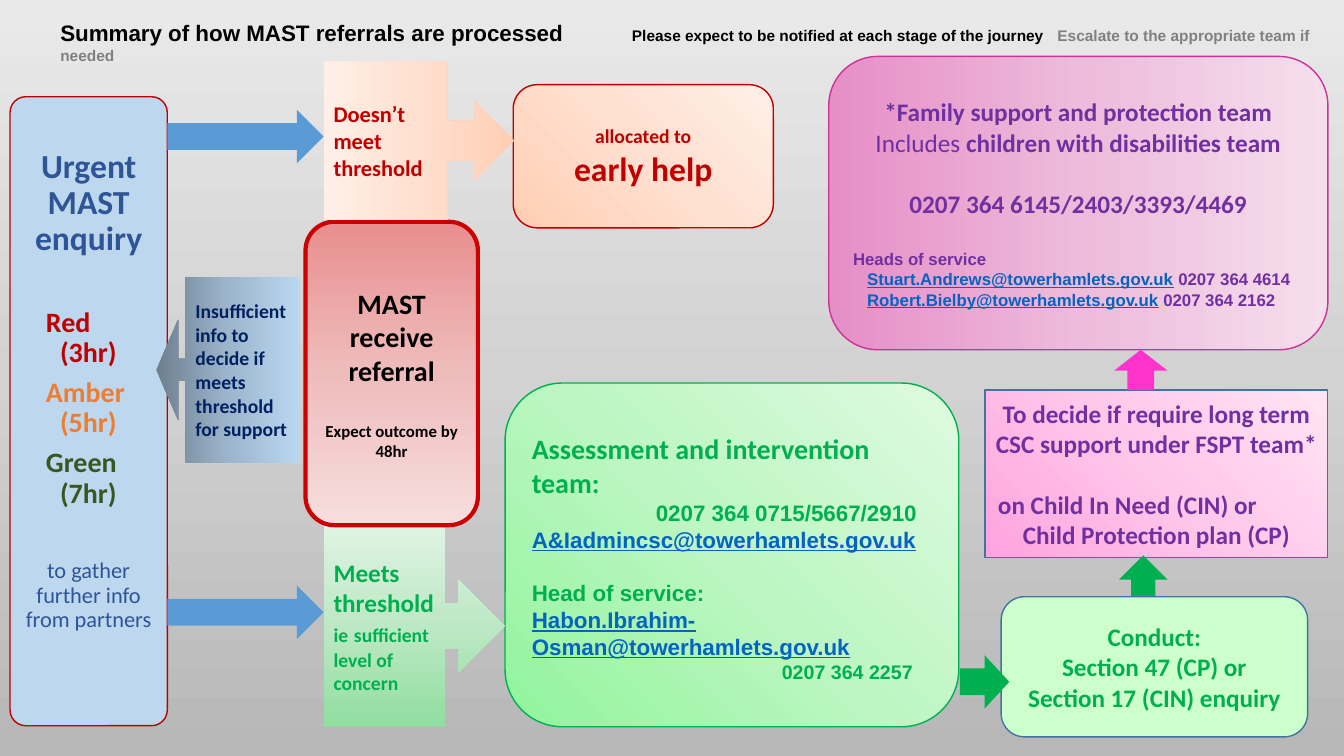
from copy import deepcopy

from lxml import etree
from pptx import Presentation
from pptx.dml.color import RGBColor
from pptx.enum.shapes import MSO_SHAPE
from pptx.enum.text import MSO_ANCHOR, PP_ALIGN
from pptx.oxml.ns import qn
from pptx.util import Inches, Pt

ROUND, RECT = MSO_SHAPE.ROUNDED_RECTANGLE, MSO_SHAPE.RECTANGLE
RIGHT, UP = MSO_SHAPE.RIGHT_ARROW, MSO_SHAPE.UP_ARROW
RIGHT_CALLOUT = MSO_SHAPE.RIGHT_ARROW_CALLOUT
LEFT_CALLOUT = MSO_SHAPE.LEFT_ARROW_CALLOUT
LEFT, CENTER = PP_ALIGN.LEFT, PP_ALIGN.CENTER

CELL = 0.1  # grid cell in inches; boxes are (column, row, columns, rows)

COLORS = {
    "black": "000000", "gray": "808080", "navy": "002060", "blue": "2F5597",
    "arrow": "5B9BD5", "sky": "BDD7EE", "edge": "43739E", "link": "0563C1",
    "red": "C00000", "bright_red": "CC0000", "amber": "ED7D31",
    "moss": "385723", "green": "00B050", "mint": "CCFFCC",
    "purple": "7030A0", "magenta": "CC3399", "pink": "FF33CC",
}
# Three colours and the direction, in degrees clockwise
GRADIENTS = {
    "page": (["B7B7B7", "D2D2D2", "E9E9E9"], 270),
    "peach": (["FFCEB3", "FFDFCF", "FFEFE7"], 315),
    "peach_left": (["FFCEB3", "FFDFCF", "FFEFE7"], 180),
    "rose": (["E98F8F", "EFBCBC", "F7DEDE"], 90),
    "steel": (["6E7F8F", "9DB5CC", "BAD7F2"], 0),
    "leaf": (["91DEA0", "BDE8C5", "DFF3E3"], 270),
    "lime": (["91F49C", "BDF6C3", "DFFAE1"], 315),
    "orchid": (["E68EC7", "EDBBDB", "F6DEED"], 0),
    "candy": (["FFA3DF", "FFC7EA", "FFE4F4"], 315),
}


def rgb(name):
    return RGBColor.from_string(COLORS[name])


def paint(owner, element, name):
    """Fill a shape or the background with a plain colour or a gradient."""
    if name in COLORS:
        owner.fill.solid()
        owner.fill.fore_color.rgb = rgb(name)
        return
    colors, angle = GRADIENTS[name]
    fill = owner.fill
    fill.gradient()
    grad = next(element.iter(qn("a:gradFill")))
    stops = grad.find(qn("a:gsLst"))
    stops.append(deepcopy(stops[0]))
    for i, (stop, color) in enumerate(zip(fill.gradient_stops, colors)):
        stop.color.rgb = RGBColor.from_string(color)
        stop.position = i / 2
    grad.find(qn("a:lin")).set("ang", str(angle * 60000))


def add_box(s, region, kind, cells, fill, line=None, width=1, adj=()):
    """Place a preset shape relative to the top left of its region."""
    x, y, w, h = cells
    sp = s.shapes.add_shape(kind, *(Inches(v * CELL) for v in
                                    (region[0] + x, region[1] + y, w, h)))
    sp.shadow.inherit = False
    for i, value in enumerate(adj):
        sp.adjustments[i] = value
    paint(sp, sp._element, fill)
    if line:
        sp.line.color.rgb = rgb(line)
        sp.line.width = Pt(width)
    else:
        sp.line.fill.background()
    tf = sp.text_frame
    tf.word_wrap = True
    tf.vertical_anchor = MSO_ANCHOR.MIDDLE
    return tf


def add_text(tf, text, size=18, color="black", font="Calibri", bold=True,
             align=LEFT, before=0, after=0, spacing=None, indent=0):
    """Add a paragraph; text is a string or a list of (string, overrides)."""
    p = tf.paragraphs[0]
    if p.runs:
        p = tf.add_paragraph()
    p.alignment = align
    p.space_before, p.space_after = Pt(before), Pt(after)
    if spacing:
        p.line_spacing = spacing
    if indent:
        p._p.get_or_add_pPr().set("marL", str(Inches(indent)))
    for words, own in [(text, {})] if isinstance(text, str) else text:
        r = p.add_run()
        r.text = words
        r.font.name = font
        r.font.size = Pt(own.get("size", size))
        r.font.bold = own.get("bold", bold)
        name = own.get("color", color)
        r.font.color.rgb = rgb(name)
        r.font.underline = name == "link"
    return p


def header(s, region):
    tf = s.shapes.add_textbox(*(Inches(v * CELL) for v in region)).text_frame
    tf.word_wrap = True
    p = add_text(tf, [
        ("Summary of how MAST referrals are processed", {"size": 16}),
        ("\tPlease expect to be notified at each stage of the journey", {}),
        ("\tEscalate to the appropriate team if needed", {"color": "gray"}),
    ], size=11, font="Arial", indent=0.5)
    tabs = etree.SubElement(p._p.get_or_add_pPr(), qn("a:tabLst"))
    for pos in (5.67, 9.89):
        etree.SubElement(tabs, qn("a:tab"), pos=str(Inches(pos)), algn="l")


def urgent_enquiry(s, region):
    tf = add_box(s, region, ROUND, (0, 0, *region[2:]), "sky", "red", adj=[0.1])
    tf.margin_left = tf.margin_right = tf.margin_top = Inches(0.02)
    tf.margin_bottom = Inches(0.43)
    add_text(tf, "Urgent MAST enquiry", 24, "blue", align=CENTER, spacing=0.9,
             after=36)
    ratings = [("Red", "(3hr)", "red", 7), ("Amber", "(5hr)", "amber", 7),
               ("Green", "(7hr)", "moss", 36)]
    for rating, hours, color, gap in ratings:
        add_text(tf, rating, 20, color, spacing=0.9, indent=0.29)
        add_text(tf, hours, 20, color, spacing=0.9, indent=0.43, after=gap)
    add_text(tf, "to gather further info from partners", 16, "blue",
             bold=False, align=CENTER, spacing=0.9)


def intake(s, region):
    # Threshold met
    tf = add_box(s, region, RIGHT_CALLOUT, (16.6, 46, 18, 20), "leaf",
                 adj=[0.25, 0.257, 0.257, 0.669])
    add_text(tf, "Meets threshold", 18, "green")
    add_text(tf, [("ie", {}), (" ", {"size": 18}),
                  ("sufficient level of concern", {})], 14, "green")
    # Referral received
    tf = add_box(s, region, ROUND, (14.8, 15.9, 17.1, 30.1), "rose",
                 "bright_red", width=3)
    add_text(tf, "MAST receive referral", 20, align=CENTER, after=24)
    add_text(tf, "Expect outcome by 48hr", 12, align=CENTER)
    # Threshold not met
    tf = add_box(s, region, RIGHT_CALLOUT, (16.6, 0, 18.9, 15.7), "peach_left")
    add_text(tf, "Doesn’t meet threshold", 16, "red")
    # Not enough information
    tf = add_box(s, region, LEFT_CALLOUT, (0, 21.4, 14.3, 18.4), "steel",
                 adj=[0.154, 0.348, 0.152, 0.797])
    add_text(tf, "Insufficient info to decide if meets threshold for support",
             14, "navy")
    # Arrows from the urgent enquiry
    for row in (4.8, 52):
        add_box(s, region, RIGHT, (1.1, row, 15.5, 5.3), "arrow")


def early_help(s, region):
    tf = add_box(s, region, ROUND, (0, 0, *region[2:]), "peach", "red")
    add_text(tf, "allocated to", 14, "red", align=CENTER)
    add_text(tf, "early help", 24, "red", align=CENTER)


def assessment(s, region):
    tf = add_box(s, region, ROUND, (0, 0, *region[2:]), "lime", "green")
    tf.margin_top = Inches(0.1)
    add_text(tf, "Assessment and intervention team:", 20, "green")
    add_text(tf, "0207 364 0715/5667/2910", 16, "green", "Arial", indent=1.23)
    add_text(tf, "A&Iadmincsc@towerhamlets.gov.uk", 16, "link", "Arial")
    add_text(tf, "Head of service:", 16, "green", "Arial", before=19)
    add_text(tf, "Habon.Ibrahim-Osman@towerhamlets.gov.uk", 16, "link", "Arial")
    add_text(tf, "0207 364 2257", 14, "green", "Arial", indent=2.48)


def long_term_support(s, region):
    # Decision
    tf = add_box(s, region, RECT, (15.5, 33.1, 34, 16.6), "candy", "edge")
    add_text(tf, "To decide if require long term CSC support under FSPT team*",
             18, "purple", align=CENTER, after=22)
    add_text(tf, "on Child In Need (CIN) or", 18, "purple", indent=0.03)
    add_text(tf, "Child Protection plan (CP)", 18, "purple", align=CENTER)
    # Family support and protection team
    tf = add_box(s, region, ROUND, (0, 0, 49.5, 29.1), "orchid", "magenta")
    add_text(tf, "*Family support and protection team", 18, "purple",
             align=CENTER)
    add_text(tf, [("Includes ", {"bold": False}),
                  ("children with disabilities team", {})], 18, "purple",
             align=CENTER, after=22)
    add_text(tf, "0207 364 6145/2403/3393/4469", 18, "purple", align=CENTER,
             after=22)
    add_text(tf, "Heads of service", 12, "purple", "Arial")
    for mail, phone in [("Stuart.Andrews@towerhamlets.gov.uk", "0207 364 4614"),
                        ("Robert.Bielby@towerhamlets.gov.uk", "0207 364 2162")]:
        add_text(tf, [(mail, {"color": "link"}), (" " + phone, {})], 12,
                 "purple", "Arial", indent=0.14)
    # Enquiry and the arrows between the steps
    add_box(s, region, UP, (28.8, 49.5, 4.8, 5.5), "green")
    add_box(s, region, UP, (28.3, 29.1, 5.3, 4), "pink", adj=[0.5, 0.52])
    tf = add_box(s, region, ROUND, (17.1, 53.6, 30.4, 13.9), "mint", "edge")
    for line in ("Conduct:", "Section 47 (CP) or", "Section 17 (CIN) enquiry"):
        add_text(tf, line, 18, "green", align=CENTER)
    add_box(s, region, RIGHT, (13, 59.4, 4.9, 5.3), "green")


def main():
    prs = Presentation()
    prs.slide_width, prs.slide_height = Inches(13.33), Inches(7.5)
    s = prs.slides.add_slide(prs.slide_layouts[6])
    paint(s.background, s._element, "page")
    urgent_enquiry(s, (1, 9.6, 15.6, 62.4))
    early_help(s, (50.9, 8.4, 25.8, 14.2))
    assessment(s, (50.1, 38, 45, 34.1))
    long_term_support(s, (82.2, 5.6, 49.5, 67.5))
    intake(s, (15.5, 6.1, 35.5, 66))
    header(s, (0, 1.4, 133.3, 3.7))
    prs.save("out.pptx")


if __name__ == "__main__":
    main()
